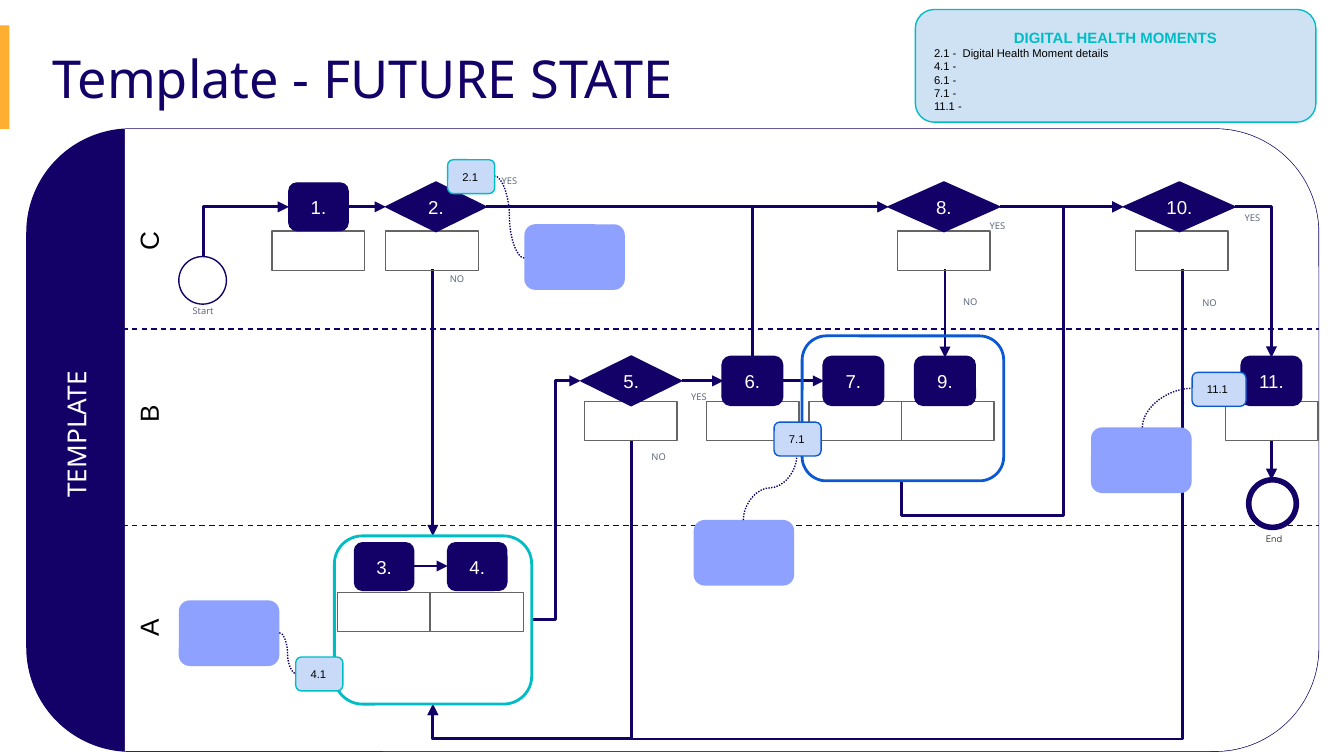
import pptx
import pptx.util
import pptx.dml.color
import pptx.enum.dml
import pptx.enum.shapes
import pptx.enum.text
import pptx.oxml.ns
import lxml.etree

Cm, Pt = pptx.util.Cm, pptx.util.Pt
RGBColor = pptx.dml.color.RGBColor
SHAPE = pptx.enum.shapes.MSO_SHAPE
CONNECTOR = pptx.enum.shapes.MSO_CONNECTOR
DASH = pptx.enum.dml.MSO_LINE
ALIGN = pptx.enum.text.PP_ALIGN
ANCHOR = pptx.enum.text.MSO_ANCHOR
qn = pptx.oxml.ns.qn

NAVY = RGBColor(0x13, 0x01, 0x68)
WHITE = RGBColor(0xFF, 0xFF, 0xFF)
BLACK = RGBColor(0x00, 0x00, 0x00)
AMBER = RGBColor(0xFE, 0xAF, 0x31)
GREY = RGBColor(0x64, 0x64, 0x64)
SLATE = RGBColor(0x5F, 0x6A, 0x7D)
TEAL = RGBColor(0x00, 0xBD, 0xC5)
BLUE = RGBColor(0x0C, 0x58, 0xD3)
PERIWINKLE = RGBColor(0x8E, 0xA1, 0xFF)
PALE = RGBColor(0xC9, 0xDA, 0xF8)
ICE = RGBColor(0xCF, 0xE2, 0xF3)


def write(shape, lines, size, color, font="Arial", align=ALIGN.CENTER, anchor=ANCHOR.MIDDLE):
    """Fill a shape with paragraphs in one style."""
    frame = shape.text_frame
    frame.word_wrap = True
    frame.vertical_anchor = anchor
    frame.margin_left = frame.margin_right = frame.margin_top = frame.margin_bottom = Cm(0.25)
    frame.text = "\n".join(lines)
    for paragraph in frame.paragraphs:
        paragraph.alignment = align
        paragraph.font.size = Pt(size)
        paragraph.font.name = font
        paragraph.font.color.rgb = color


def draw(shapes, box, kind, at, fill=None, line=None, weight=0.75):
    """Draw a preset shape at a place relative to the box."""
    x, y, width, height = at
    shape = shapes.add_shape(kind, Cm(box[0] + x), Cm(box[1] + y), Cm(width), Cm(height))
    shape.shadow.inherit = False
    if fill is None:
        shape.fill.background()
    else:
        shape.fill.solid()
        shape.fill.fore_color.rgb = fill
    if line is None:
        shape.line.fill.background()
    else:
        shape.line.color.rgb = line
        shape.line.width = Pt(weight)
    return shape


def label(shapes, box, at, text, size, color, font="Arial", align=ALIGN.CENTER,
          anchor=ANCHOR.TOP, rotation=0):
    """Place a text box relative to the box."""
    x, y, width, height = at
    caption = shapes.add_textbox(Cm(box[0] + x), Cm(box[1] + y), Cm(width), Cm(height))
    caption.rotation = rotation
    write(caption, [text], size, color, font, align, anchor)


def connect(shapes, box, start, end, preset="line", vertical=False, adjust=(),
            weight=1.5, dash=None, arrow=True):
    """Join two points, leaving the first one sideways or vertically."""
    x1, y1, x2, y2 = box[0] + start[0], box[1] + start[1], box[0] + end[0], box[1] + end[1]
    rotation = 0
    if vertical:
        rotation = 90 if y2 > y1 else 270
        run, drift = abs(y2 - y1), (x1 - x2 if y2 > y1 else x2 - x1)
        mid_x, mid_y = (x1 + x2) / 2, (y1 + y2) / 2
        x1, x2 = mid_x - run / 2, mid_x + run / 2
        y1, y2 = mid_y - drift / 2, mid_y + drift / 2
    link = shapes.add_connector(CONNECTOR.STRAIGHT, Cm(x1), Cm(y1), Cm(x2), Cm(y2))
    link.line.color.rgb = NAVY
    link.line.width = Pt(weight)
    if dash:
        link.line.dash_style = dash
    properties = link._element.spPr
    if rotation:
        properties.find(qn("a:xfrm")).set("rot", str(rotation * 60000))
    geometry = properties.find(qn("a:prstGeom"))
    geometry.set("prst", preset)
    for number, value in enumerate(adjust, 1):
        name = "adj1" if len(adjust) == 1 else f"adj{number}"
        lxml.etree.SubElement(geometry.find(qn("a:avLst")), qn("a:gd"),
                              name=name, fmla=f"val {round(value * 100000)}")
    if arrow:
        lxml.etree.SubElement(properties.find(qn("a:ln")), qn("a:tailEnd"), type="triangle")
    lxml.etree.SubElement(properties, qn("a:effectLst"))


def title_band(shapes, box):
    """Draw the accent bar and the slide title."""
    draw(shapes, box, SHAPE.RECTANGLE, (0, 0, 0.18, box[3]), AMBER)
    label(shapes, box, (0.74, 0.13, 17.15, 1.73), "Template - FUTURE STATE", 28, NAVY,
          "Noto Sans", ALIGN.LEFT, ANCHOR.MIDDLE)


def moments_legend(shapes, box):
    """Draw the list of digital health moments."""
    legend = draw(shapes, box, SHAPE.ROUNDED_RECTANGLE, (0, 0, *box[2:]), ICE, TEAL)
    entries = ["2.1 -  Digital Health Moment details", "4.1 -", "6.1 -", "7.1 -", "11.1 -"]
    write(legend, ["DIGITAL HEALTH MOMENTS"] + entries, 6, BLACK,
          align=ALIGN.LEFT, anchor=ANCHOR.TOP)
    heading = legend.text_frame.paragraphs[0]
    heading.alignment = ALIGN.CENTER
    heading.font.size, heading.font.bold, heading.font.color.rgb = Pt(8), True, TEAL


def pool(shapes, box):
    """Draw the pool with its side title and lane dividers."""
    width, height = box[2:]
    body = shapes.add_group_shape().shapes
    draw(body, box, SHAPE.ROUNDED_RECTANGLE, (0, 0, width, height), NAVY, NAVY)
    draw(body, box, SHAPE.RECTANGLE, (1.85, 0, 20.52, height), WHITE)
    draw(body, box, SHAPE.ROUNDED_RECTANGLE, (4.88, 0, width - 4.88, height), WHITE)
    for y in (3.78, 7.49):
        connect(shapes, box, (1.62, y), (width, y), weight=0.75, dash=DASH.DASH, arrow=False)
    label(shapes, box, (-1.5, 5.21, 4.88, 1.12), "TEMPLATE", 14, WHITE, "Noto Sans", rotation=270)


def flows(shapes, box):
    """Draw the sequence arrows, their branch labels and the end events."""
    for start, end in [
        ((6.07, 1.47), (6.78, 1.47)), ((8.68, 1.47), (16.28, 1.47)),
        ((18.39, 1.47), (20.72, 1.47)), ((12.37, 4.76), (13.16, 4.76)),
        ((14.27, 4.76), (15.06, 4.76)), ((7.31, 8.26), (7.95, 8.26)),
        ((7.67, 2.64), (7.67, 7.69)), ((17.35, 2.64), (17.35, 4.32)),
        ((23.52, 5.87), (23.52, 6.63)),
    ]:
        connect(shapes, box, start, end)
    for start, end, bends, vertical, adjust in [
        ((3.33, 2.41), (4.95, 1.47), 2, True, ()),
        ((9.52, 9.27), (10.46, 4.76), 3, False, (0.5,)),
        ((11.43, 5.87), (7.67, 10.87), 3, True, (1.13,)),
        ((13.71, 4.32), (16.28, 1.47), 2, True, ()),
        ((21.84, 2.64), (7.67, 10.87), 3, True, (1.08,)),
        ((22.83, 1.47), (23.52, 4.32), 2, False, ()),
        ((16.53, 6.63), (20.72, 1.47), 4, True, (-0.13, 0.73)),
    ]:
        connect(shapes, box, start, end, f"bentConnector{bends}", vertical, adjust)
    branches = {
        "YES": [(22.65, 1.47), (17.83, 1.62), (12.19, 4.85), (8.61, 0.76)],
        "NO": [(11.43, 5.99), (17.32, 3.05), (21.84, 3.07), (7.62, 2.61)],
        "Start": [(2.82, 3.22)],
    }
    for answer, places in branches.items():
        for place in places:
            label(shapes, box, (*place, 1.02, 0.74), answer, 5, SLATE, "Noto Sans")
    label(shapes, box, (23.06, 7.54, 1.02, 0.74), "End", 5, BLACK, "Quicksand")
    draw(shapes, box, SHAPE.OVAL, (2.87, 2.41, 0.9, 0.9), line=NAVY)
    draw(shapes, box, SHAPE.OVAL, (23.09, 6.63, 0.9, 0.9), line=NAVY, weight=3)


def lane(shapes, box, name, name_y, row_y, caption_y, weight, steps):
    """Draw a lane name and its row of numbered steps with captions."""
    label(shapes, box, (-0.56, name_y - 0.56, 2.5, 1.12), name, 14, BLACK, rotation=270)
    for number, x, caption_x, width in steps:
        draw(shapes, box, SHAPE.RECTANGLE, (caption_x - 0.88, caption_y, 1.75, 0.74), line=GREY)
        decision = width > 1.5
        height = 0.94 if decision else 0.9
        step = draw(shapes, box, SHAPE.DIAMOND if decision else SHAPE.ROUNDED_RECTANGLE,
                    (x - width / 2, row_y - height / 2, width, height), NAVY, NAVY,
                    0.75 if decision else weight)
        write(step, [f"{number}."], 10, WHITE)


def moments(shapes, box):
    """Draw the step frames and the moment badges linked to their notes."""
    for at, color in [((5.81, 7.69, 3.73, 3.18), TEAL), ((14.65, 3.91, 3.81, 2.74), BLUE)]:
        draw(shapes, box, SHAPE.ROUNDED_RECTANGLE, at, line=color, weight=1.5)
    for number, note, start, end, bends, vertical, badge, width, color in [
        ("4.1", (2.87, 8.91), (4.77, 9.52), (5.08, 10.29), 3, False, (5.08, 9.98), 0.89, TEAL),
        ("2.1", (9.4, 1.8), (9.4, 2.44), (8.84, 0.89), 3, False, (7.95, 0.58), 0.89, TEAL),
        ("11.1", (20.11, 5.64), (21.08, 5.64), (22.02, 4.9), 2, True, (22.02, 4.6), 1.02, BLUE),
        ("7.1", (12.6, 7.39), (13.54, 7.39), (14.55, 6.17), 3, True, (14.12, 5.54), 0.89, BLUE),
    ]:
        draw(shapes, box, SHAPE.ROUNDED_RECTANGLE, (*note, 1.9, 1.24), PERIWINKLE)
        connect(shapes, box, start, end, f"curvedConnector{bends}", vertical,
                weight=0.75, dash=DASH.ROUND_DOT, arrow=False)
        tag = draw(shapes, box, SHAPE.ROUNDED_RECTANGLE, (*badge, width, 0.64), PALE, color)
        write(tag, [number], 6, BLACK, align=ALIGN.LEFT)


def main():
    """Build the process map and save it."""
    deck = pptx.Presentation()
    deck.slide_width, deck.slide_height = Cm(25.4), Cm(14.29)
    shapes = deck.slides.add_slide(deck.slide_layouts[6]).shapes
    diagram = (0.51, 2.44, 24.41, 11.76)
    title_band(shapes, (0, 0.48, 17.88, 1.96))
    moments_legend(shapes, (17.3, 0.18, 7.57, 2.13))
    pool(shapes, diagram)
    flows(shapes, diagram)
    lane(shapes, (2.13, 2.44, 22.78, 3.78), "C", 2.11, 1.47, 1.93, 0.75,
         [(1, 3.89, 3.89, 1.12), (2, 6.11, 6.04, 1.9), (8, 15.71, 15.71, 2.11),
          (10, 20.16, 20.21, 2.11)])
    lane(shapes, (2.13, 6.22, 22.78, 3.71), "B", 1.6, 0.98, 1.37, 1.5,
         [(5, 9.8, 9.8, 1.9), (6, 12.09, 12.1, 1.12), (7, 14, 14.04, 1.12),
          (9, 15.73, 15.79, 1.12), (11, 21.9, 21.91, 1.12)])
    lane(shapes, (2.13, 9.93, 22.78, 4.27), "A", 1.93, 0.78, 1.27, 0.75,
         [(3, 5.13, 5.13, 1.12), (4, 6.89, 6.89, 1.12)])
    moments(shapes, diagram)
    deck.save("out.pptx")


if __name__ == "__main__":
    main()
